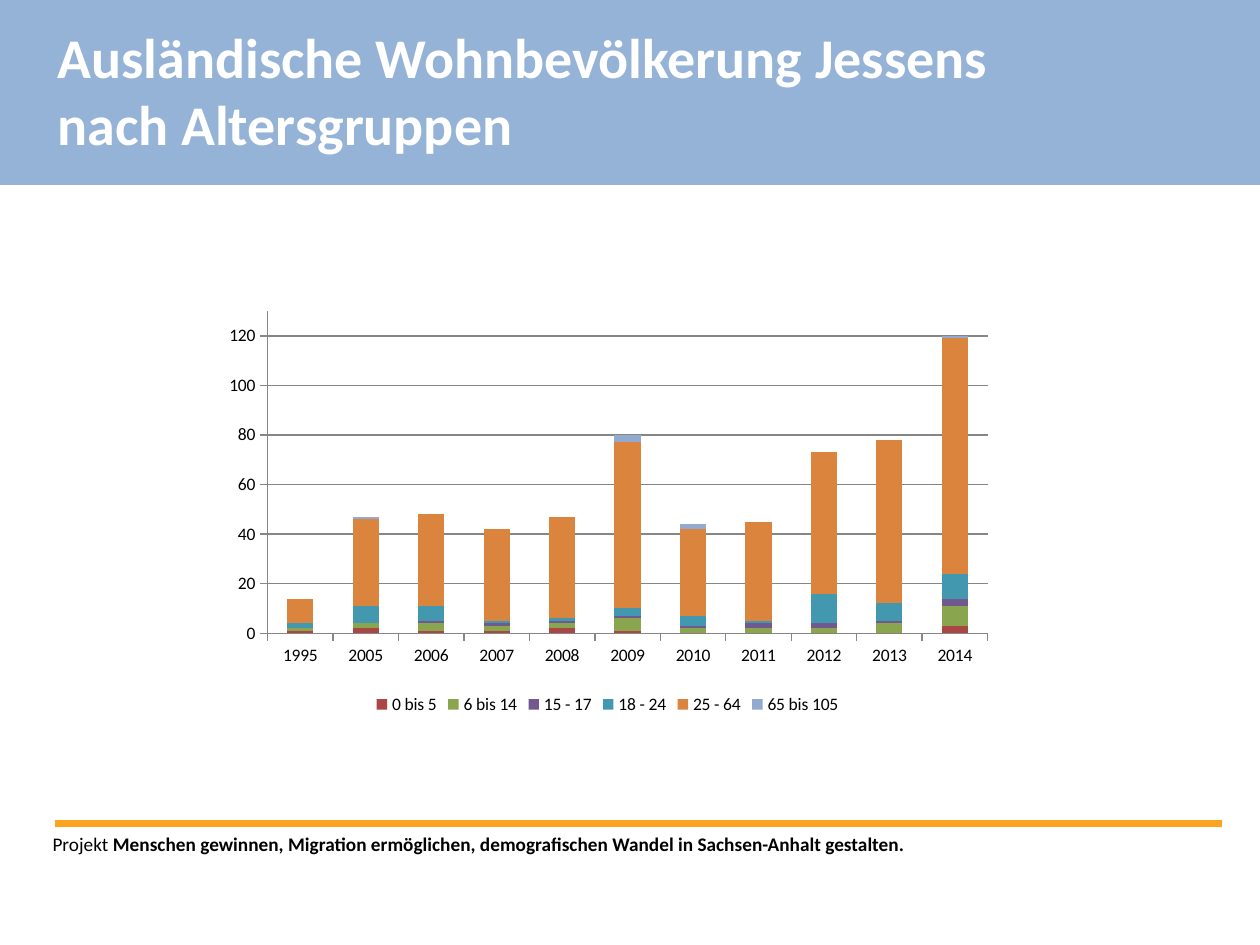
from lxml import etree
from pptx import Presentation
from pptx.chart.data import CategoryChartData
from pptx.dml.color import RGBColor
from pptx.enum.chart import XL_CHART_TYPE, XL_LEGEND_POSITION, XL_TICK_MARK
from pptx.enum.shapes import MSO_CONNECTOR, MSO_SHAPE
from pptx.enum.text import MSO_AUTO_SIZE
from pptx.oxml import parse_xml
from pptx.oxml.ns import nsdecls, qn
from pptx.util import Cm, Pt

STACKED = XL_CHART_TYPE.COLUMN_STACKED
BOTTOM = XL_LEGEND_POSITION.BOTTOM
OUT, NONE = XL_TICK_MARK.OUTSIDE, XL_TICK_MARK.NONE
GROW = MSO_AUTO_SIZE.SHAPE_TO_FIT_TEXT

WHITE = RGBColor(0xFF, 0xFF, 0xFF)
BLACK = RGBColor(0, 0, 0)
BLUE = RGBColor(0x95, 0xB3, 0xD7)
ORANGE = RGBColor(0xFC, 0xA3, 0x20)
GRAY = RGBColor(0x86, 0x86, 0x86)

# Each paragraph is a list of (text, bold) runs
TITLE = [
    [("Ausländische Wohnbevölkerung Jessens", True)],
    [("nach Altersgruppen", True)],
]
FOOTER = [[
    ("Projekt ", False),
    ("Menschen gewinnen, Migration ermöglichen, demografischen Wandel "
     "in Sachsen-Anhalt gestalten.", True),
]]
YEARS = ["1995", *map(str, range(2005, 2015))]
GROUPS = [
    ("0 bis 5", RGBColor(0xAA, 0x46, 0x43), (1, 2, 1, 1, 2, 1, 0, 0, 0, 0, 3)),
    ("6 bis 14", RGBColor(0x89, 0xA5, 0x4E), (1, 2, 3, 2, 2, 5, 2, 2, 2, 4, 8)),
    ("15 - 17", RGBColor(0x71, 0x58, 0x8F), (0, 0, 1, 1, 1, 1, 1, 2, 2, 1, 3)),
    ("18 - 24", RGBColor(0x41, 0x98, 0xAF), (2, 7, 6, 1, 1, 3, 4, 1, 12, 7, 10)),
    ("25 - 64", RGBColor(0xDB, 0x84, 0x3D),
     (10, 35, 37, 37, 41, 67, 35, 40, 57, 66, 95)),
    ("65 bis 105", RGBColor(0x93, 0xA9, 0xCF), (0, 1, 0, 0, 0, 3, 2, 0, 0, 0, 1)),
]
PLOT = {"x": 0.08, "y": 0.05, "w": 0.89, "h": 0.75}
SCALE = {"minimum_scale": 0, "maximum_scale": 130, "major_unit": 20,
         "has_major_gridlines": True}


def style(item, **values):
    for name, value in values.items():
        setattr(item, name, value)


def add_text(slide, paras, box, size, color, wrap):
    frame = slide.shapes.add_textbox(*map(Cm, box)).text_frame
    style(frame, word_wrap=wrap, auto_size=GROW)
    for i, runs in enumerate(paras):
        para = frame.add_paragraph() if i else frame.paragraphs[0]
        for text, bold in runs:
            run = para.add_run()
            run.text = text
            style(run.font, size=Pt(size), name="Calibri", bold=bold)
            run.font.color.rgb = color


def add_band(slide):
    band = slide.shapes.add_shape(MSO_SHAPE.RECTANGLE, 0, 0, Cm(25.4), Cm(3.73))
    band.shadow.inherit = False
    band.fill.solid()
    band.fill.fore_color.rgb = BLUE
    band.line.fill.background()


def add_rule(slide):
    y = Cm(16.61)
    rule = slide.shapes.add_connector(
        MSO_CONNECTOR.STRAIGHT, Cm(1.1), y, Cm(24.63), y)
    rule.line.color.rgb = ORANGE
    rule.line.width = Pt(4)
    etree.SubElement(rule._element.spPr, qn("a:effectLst"))


def place_plot(chart):
    """Fix the inner plot area as fractions of the chart."""
    area = chart._chartSpace.chart.plotArea
    for old in area.findall(qn("c:layout")):
        area.remove(old)
    marks = "".join(f'<c:{k}Mode val="edge"/>' for k in "xy")
    marks += "".join(f'<c:{k} val="{v}"/>' for k, v in PLOT.items())
    area.insert(0, parse_xml(
        f'<c:layout {nsdecls("c")}><c:manualLayout>'
        f'<c:layoutTarget val="inner"/>{marks}</c:manualLayout></c:layout>'))


def add_ages(slide):
    data = CategoryChartData()
    data.categories = YEARS
    for name, _, counts in GROUPS:
        data.add_series(name, counts)
    box = map(Cm, (4.09, 5.84, 16.31, 8.66))
    chart = slide.shapes.add_chart(STACKED, *box, data).chart
    style(chart, has_title=False, has_legend=True)
    style(chart.legend, position=BOTTOM, include_in_layout=False)
    style(chart.font, size=Pt(10), name="Calibri")
    chart.font.color.rgb = BLACK

    plot = chart.plots[0]
    style(plot, gap_width=150, overlap=100, vary_by_categories=False)
    for bars, (_, color, _) in zip(plot.series, GROUPS):
        bars.format.fill.solid()
        bars.format.fill.fore_color.rgb = color

    style(chart.value_axis, **SCALE)
    for axis in (chart.category_axis, chart.value_axis):
        style(axis, major_tick_mark=OUT, minor_tick_mark=NONE)
    for part in (chart.category_axis, chart.value_axis,
                 chart.value_axis.major_gridlines):
        part.format.line.color.rgb = GRAY
        part.format.line.width = Pt(0.75)
    place_plot(chart)


def main():
    deck = Presentation()
    style(deck, slide_width=Cm(25.4), slide_height=Cm(19.05))
    slide = deck.slides.add_slide(deck.slide_layouts[6])
    add_rule(slide)
    add_band(slide)
    add_text(slide, TITLE, (0.91, 0.33, 19.69, 3), 32, WHITE, False)
    add_text(slide, FOOTER, (0.81, 16.66, 19.89, 0.74), 11, BLACK, True)
    add_ages(slide)
    deck.save("out.pptx")


if __name__ == "__main__":
    main()
